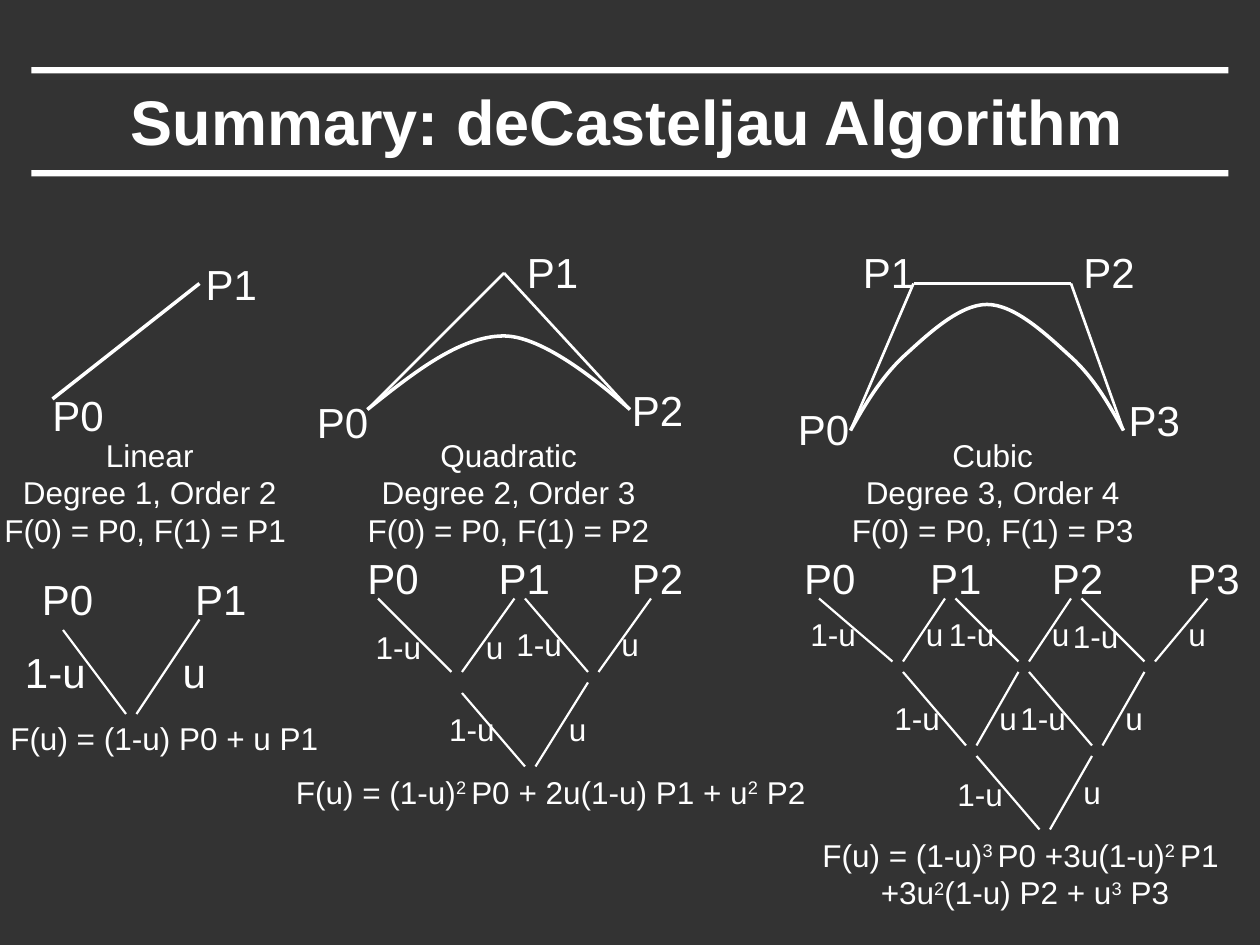
from lxml import etree
from pptx import Presentation
from pptx.dml.color import RGBColor
from pptx.enum.shapes import MSO_CONNECTOR, MSO_SHAPE
from pptx.enum.text import MSO_ANCHOR, MSO_AUTO_SIZE, PP_ALIGN
from pptx.oxml.ns import qn
from pptx.util import Emu, Inches, Pt

COLUMNS, ROWS = 120, 90
CELL = Inches(10) // COLUMNS
COLORS = {"background": "333333", "ink": "FFFFFF"}
FONT = "Arial"
STRAIGHT, RECTANGLE = MSO_CONNECTOR.STRAIGHT, MSO_SHAPE.RECTANGLE
LEFT, CENTER = PP_ALIGN.LEFT, PP_ALIGN.CENTER
TOP, MIDDLE = MSO_ANCHOR.TOP, MSO_ANCHOR.MIDDLE
FIT, LARGE, SMALL = MSO_AUTO_SIZE.SHAPE_TO_FIT_TEXT, 24, 18

# Widths of the short labels, in columns
LABEL_WIDTHS = {
    LARGE: {"P": 7.3, "1-u": 8.2, "u": 4.7},
    SMALL: {"1-u": 6.7, "u": 4.1},
}
LABEL_HEIGHTS = {LARGE: 6, SMALL: 4.8}

# Captions: left column, lines of text
CAPTIONS = [
    (-0.8, [" Linear", " Degree 1, Order 2", "F(0) = P0, F(1) = P1"]),
    (33.8, ["Quadratic", "Degree 2, Order 3", "F(0) = P0, F(1) = P2"]),
    (79.9, ["Cubic", "Degree 3, Order 4", "F(0) = P0, F(1) = P3"]),
]

# Control polygons: line width, corners, label places of P0, P1, ...
POLYGONS = [
    (2, [(5, 38), (19, 27)], [(3.8, 36.5), (18.4, 24)]),
    (1.5, [(35, 39), (48, 26), (60, 39)], [(29, 37.2), (49, 22.9), (59, 36)]),
    (1.5, [(81, 41), (87, 27), (102, 27), (107, 41)],
     [(74.8, 37.8), (81, 22.9), (102, 22.9), (106.3, 37)]),
]

# Bezier curves: start, then three points for each segment
CURVES = [
    [(35, 39), (39.4, 35.5), (43.8, 32), (48, 32),
     (52.2, 32), (58.6, 37.8), (60, 39)],
    [(81, 41), (82.4, 38.5), (83.9, 36), (86, 34),
     (88.2, 32), (91.3, 29), (94, 29),
     (96.7, 29), (99.8, 32), (102, 34),
     (104.2, 36), (105.6, 38.5), (107, 41)],
]

# Tree heads: row, columns of P0, P1, ...
TREE_HEADS = [
    (54, [2.8, 17.4]),
    (52, [33.8, 46.3, 59]),
    (52, [75.4, 87.4, 99, 112]),
]

# Forks: left start, right start, meeting point, place of 1-u, place of u, size
FORKS = [
    ((6, 60), (19, 59), (12, 68), (1.2, 61), (16.2, 61), LARGE),
    ((36, 57), (49, 57), (43, 64), (34.6, 59.2), (45.1, 59.2), SMALL),
    ((50, 57), (62, 57), (56, 64), (48, 58.9), (58, 58.9), SMALL),
    ((44, 66), (56, 65), (50, 73), (41.6, 67), (53, 67), SMALL),
    ((78, 57), (90, 57), (85, 63), (76, 58), (87, 58), SMALL),
    ((91, 57), (102, 57), (97, 63), (89.2, 58), (99, 58), SMALL),
    ((103, 57), (115, 57), (109, 63), (101, 58.2), (112, 58), SMALL),
    ((86, 64), (97, 64), (92, 71), (84, 66), (94, 66), SMALL),
    ((98, 64), (109, 64), (104, 71), (96, 66), (106, 66), SMALL),
    ((93, 72), (104, 72), (99, 79), (90, 73.2), (102, 73), SMALL),
]

# Formulas: box, alignment, lines; every second part between bars is raised
FORMULAS = [
    ((-0.2, 67.9, 31.8, 4.8), LEFT, ["F(u) = (1-u) P0 + u P1"]),
    ((27, 73, 51.2, 4.8), LEFT,
     ["F(u) = (1-u)|2 |P0 + 2u(1-u) P1 + u|2| P2"]),
    ((76.9, 79, 40.6, 8.4), CENTER,
     ["F(u) = (1-u)|3 |P0 +3u(1-u)|2 |P1", " +3u|2|(1-u) P2 + u|3| P3"]),
]


def cells(*counts):
    return [Emu(round(count * CELL)) for count in counts]


def ink():
    return RGBColor.from_string(COLORS["ink"])


def set_values(target, values):
    for name, value in values.items():
        setattr(target, name, value)


def format_line(line, width):
    line.color.rgb = ink()
    line.width = Pt(width)


def add_text(slide, box, lines, size, alignment=LEFT, bold=False, anchor=TOP):
    """Add one paragraph per line; odd parts between bars are superscripts."""
    frame = slide.shapes.add_textbox(*cells(*box)).text_frame
    set_values(frame, {"word_wrap": False, "auto_size": FIT,
                       "vertical_anchor": anchor})
    for index, line in enumerate(lines):
        paragraph = frame.add_paragraph() if index else frame.paragraphs[0]
        paragraph.alignment = alignment
        for position, part in enumerate(line.split("|")):
            run = paragraph.add_run()
            run.text = part
            set_values(run.font, {"name": FONT, "size": Pt(size), "bold": bold})
            run.font.color.rgb = ink()
            if position % 2:
                run._r.get_or_add_rPr().set("baseline", "30000")


def add_label(slide, place, text, size=LARGE):
    width = LABEL_WIDTHS[size]["P" if text.startswith("P") else text]
    add_text(slide, (*place, width, LABEL_HEIGHTS[size]), [text], size)


def add_line(slide, start, end, width):
    connector = slide.shapes.add_connector(STRAIGHT, *cells(*start, *end))
    format_line(connector.line, width)
    etree.SubElement(connector._element.spPr, qn("a:effectLst"))


def add_curve(slide, points):
    """Build an open outline and turn each three steps into one Bezier segment."""
    start, *steps = [cells(*point) for point in points]
    builder = slide.shapes.build_freeform(*start)
    builder.add_line_segments(steps, close=False)
    shape = builder.convert_to_shape()
    shape.shadow.inherit = False
    shape.fill.background()
    format_line(shape.line, 2)
    outline = shape._element.find(".//" + qn("a:path"))
    straight = outline.findall(qn("a:lnTo"))
    for first in range(0, len(straight), 3):
        segment = etree.SubElement(outline, qn("a:cubicBezTo"))
        for step in straight[first:first + 3]:
            segment.append(step[0])
            outline.remove(step)


def add_heading(slide):
    for row in (16.2, 6.4):
        bar = slide.shapes.add_shape(RECTANGLE, *cells(3, row, 114, 0.6))
        bar.shadow.inherit = False
        bar.fill.solid()
        bar.fill.fore_color.rgb = ink()
        bar.line.fill.background()
    add_text(slide, (8.9, 7, 101.6, 9), ["Summary: deCasteljau Algorithm"],
             36, CENTER, bold=True, anchor=MIDDLE)


def add_polygon(slide, width, corners, places):
    for start, end in zip(corners, corners[1:]):
        add_line(slide, start, end, width)
    for index, place in enumerate(places):
        add_label(slide, place, f"P{index}")


def add_fork(slide, left, right, meeting, left_label, right_label, size):
    column, row = meeting
    add_line(slide, left, meeting, 1.25)
    add_line(slide, right, (column + 1, row), 1.25)
    add_label(slide, left_label, "1-u", size)
    add_label(slide, right_label, "u", size)


def main():
    presentation = Presentation()
    set_values(presentation, {"slide_width": COLUMNS * CELL,
                              "slide_height": ROWS * CELL})
    slide = presentation.slides.add_slide(presentation.slide_layouts[6])
    slide.background.fill.solid()
    slide.background.fill.fore_color.rgb = RGBColor.from_string(COLORS["background"])

    add_heading(slide)
    for column, lines in CAPTIONS:
        add_text(slide, (column, 40.9, 29.3, 12), lines, SMALL, CENTER)
    for polygon in POLYGONS:
        add_polygon(slide, *polygon)
    for points in CURVES:
        add_curve(slide, points)
    for row, columns in TREE_HEADS:
        for index, column in enumerate(columns):
            add_label(slide, (column, row), f"P{index}")
    for fork in FORKS:
        add_fork(slide, *fork)
    for box, alignment, lines in FORMULAS:
        add_text(slide, box, lines, SMALL, alignment)
    presentation.save("out.pptx")


if __name__ == "__main__":
    main()
